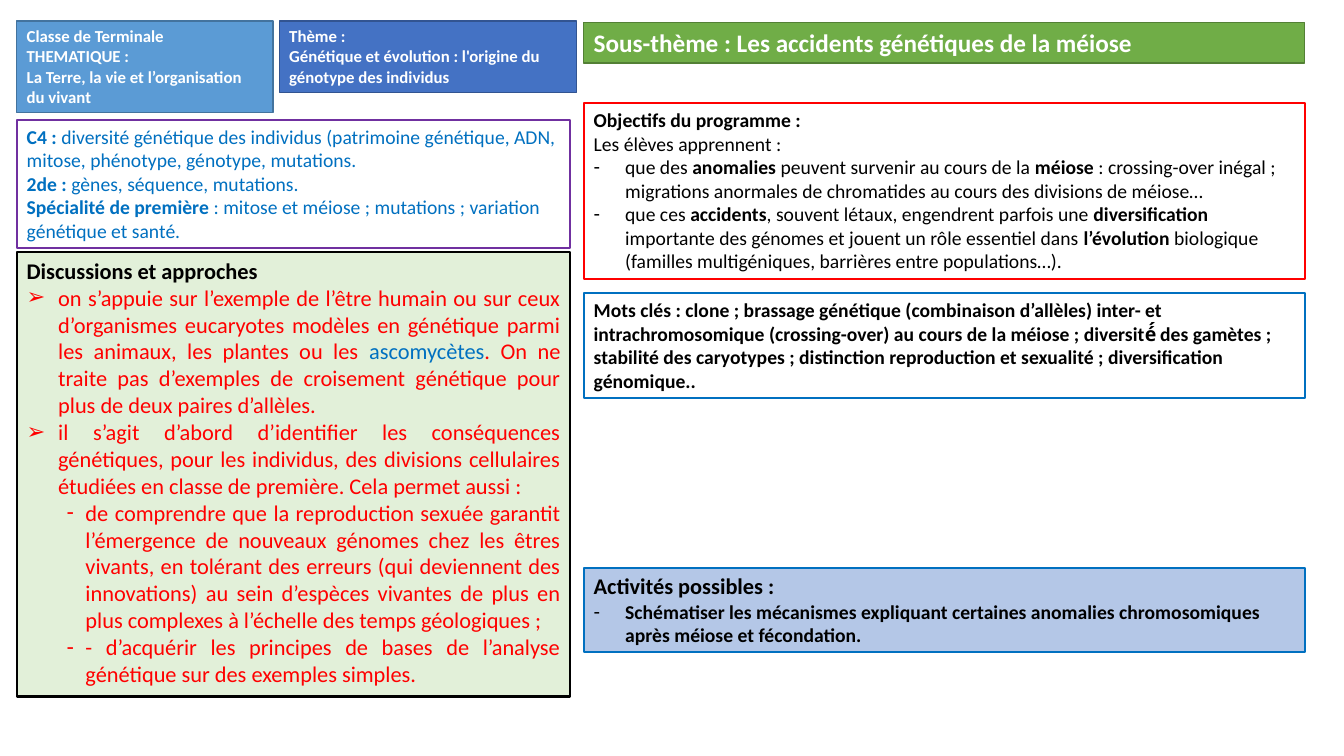
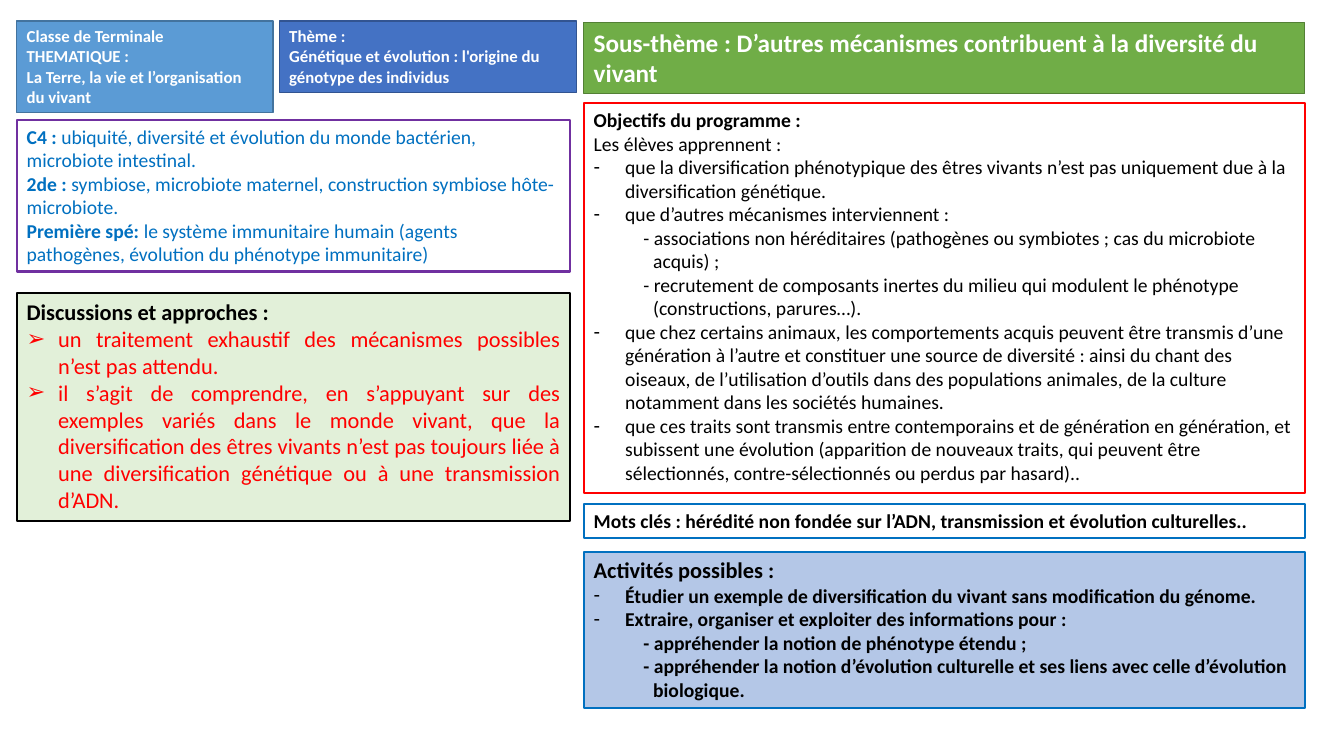
from dataclasses import dataclass, replace
from typing import NamedTuple, Optional

from lxml import etree
from pptx import Presentation
from pptx import util as u
from pptx.dml import color as colors
from pptx.enum import shapes, text
from pptx.oxml import ns


# Theme: colours, type sizes and font
@dataclass(frozen=True)
class Theme:
    font: str = "Calibri"
    white: str = "FFFFFF"
    black: str = "000000"
    red: str = "FF0000"
    blue: str = "0070C0"
    purple: str = "7030A0"
    class_fill: str = "5B9BD5"
    class_line: str = "43739E"
    topic_fill: str = "4472C4"
    topic_line: str = "325491"
    subtopic_fill: str = "70AD47"
    subtopic_line: str = "538035"
    discussion_fill: str = "E2F0D9"
    activity_fill: str = "B4C7E7"
    label_size: float = 12
    body_size: float = 14
    heading_size: float = 16
    title_size: float = 18


THEME = Theme()


# Paragraph styles; *asterisks* in a text mark its emphasised parts
@dataclass(frozen=True)
class ParagraphStyle:
    size: float
    color: str = THEME.black
    bold: bool = False
    emphasis_color: Optional[str] = None  # None: emphasis is bold
    justified: bool = False
    level: int = 0
    margin: float = 0
    indent: float = 0
    bullet: str = ""


LABEL = ParagraphStyle(THEME.label_size, THEME.white, bold=True)
TITLE = replace(LABEL, size=THEME.title_size)
BODY = ParagraphStyle(THEME.body_size)
INTRO = replace(BODY, justified=True)
INTRO_BOLD = replace(INTRO, bold=True)
KEYWORDS = replace(BODY, bold=True)
ITEM = replace(BODY, margin=22.5, indent=-22.5, bullet="-")
SUBITEM = replace(BODY, level=1, margin=42.5, indent=-7)
PRIOR = replace(BODY, color=THEME.blue)
HEADING = replace(KEYWORDS, size=THEME.heading_size)
DISCUSSION_HEADING = replace(HEADING, justified=True)
ACTIVITY = replace(ITEM, bold=True)
SUBACTIVITY = replace(SUBITEM, bold=True)
ARROW = ParagraphStyle(THEME.heading_size, THEME.red, emphasis_color=THEME.blue,
                       justified=True, level=1, margin=22.5, indent=-22.5, bullet="➢")
DASH = replace(ARROW, margin=42, indent=-13.5, bullet="-")


# Panel kinds: column, outline and fill
class PanelKind(NamedTuple):
    left: float
    width: float
    line: str
    line_width: float = 1.5
    fill: Optional[str] = None


LEFT, LEFT_WIDTH = 12, 395.5
RIGHT, RIGHT_WIDTH = 417, 515

CLASS = PanelKind(LEFT, 183, THEME.class_line, 1, THEME.class_fill)
TOPIC = PanelKind(199.5, 212.5, THEME.topic_line, 1, THEME.topic_fill)
SUBTOPIC = PanelKind(RIGHT, RIGHT_WIDTH, THEME.subtopic_line, 1, THEME.subtopic_fill)
PRIOR_BOX = PanelKind(LEFT, LEFT_WIDTH, THEME.purple)
DISCUSSION_BOX = PanelKind(LEFT, LEFT_WIDTH, THEME.black, fill=THEME.discussion_fill)
OBJECTIVE_BOX = PanelKind(RIGHT, RIGHT_WIDTH, THEME.red)
KEYWORD_BOX = PanelKind(RIGHT, RIGHT_WIDTH, THEME.blue)
ACTIVITY_BOX = PanelKind(RIGHT, RIGHT_WIDTH, THEME.blue, fill=THEME.activity_fill)


class Line(NamedTuple):
    style: ParagraphStyle
    text: str


class Panel(NamedTuple):
    kind: PanelKind
    top: float
    height: float
    lines: list[Line]


# Panels shared by both slides
HEADER = [
    Panel(CLASS, 15, 65.5, [
        Line(LABEL, "Classe de Terminale"),
        Line(LABEL, "THEMATIQUE :"),
        Line(LABEL, "La Terre, la vie et l’organisation du vivant"),
    ]),
    Panel(TOPIC, 15, 51, [
        Line(LABEL, "Thème :"),
        Line(LABEL, "Génétique et évolution : l'origine du génotype des individus"),
    ]),
]
OBJECTIVE_INTRO = [
    Line(INTRO_BOLD, "Objectifs du programme :"),
    Line(INTRO, "Les élèves apprennent :"),
]
ACTIVITY_INTRO = [Line(HEADING, "Activités possibles :")]
SUBTOPIC_TOP, BOX_TOP, PRIOR_TOP = 16, 73.5, 85.5

# Slide 1: genetic accidents of meiosis
ACCIDENTS = [
    Panel(SUBTOPIC, SUBTOPIC_TOP, 29, [
        Line(TITLE, "Sous-thème : Les accidents génétiques de la méiose"),
    ]),
    Panel(OBJECTIVE_BOX, BOX_TOP, 126, OBJECTIVE_INTRO + [
        Line(ITEM, "que des *anomalies* peuvent survenir au cours de la *méiose* : "
                   "crossing-over inégal ; migrations anormales de chromatides au cours "
                   "des divisions de méiose…"),
        Line(ITEM, "que ces *accidents*, souvent létaux, engendrent parfois une "
                   "*diversification* importante des génomes et jouent un rôle essentiel "
                   "dans *l’évolution* biologique (familles multigéniques, barrières "
                   "entre populations…)."),
    ]),
    Panel(PRIOR_BOX, PRIOR_TOP, 92, [
        Line(PRIOR, "*C4 : *diversité génétique des individus (patrimoine génétique, ADN, "
                    "mitose, phénotype, génotype, mutations."),
        Line(PRIOR, "*2de : *gènes, séquence, mutations."),
        Line(PRIOR, "*Spécialité de première* : mitose et méiose ; mutations ; variation "
                    "génétique et santé."),
    ]),
    Panel(DISCUSSION_BOX, 180, 317.5, [
        Line(DISCUSSION_HEADING, "Discussions et approches"),
        Line(ARROW, "on s’appuie sur l’exemple de l’être humain ou sur ceux d’organismes "
                    "eucaryotes modèles en génétique parmi les animaux, les plantes ou les "
                    "*ascomycètes*. On ne traite pas d’exemples de croisement génétique "
                    "pour plus de deux paires d’allèles."),
        Line(ARROW, "il s’agit d’abord d’identifier les conséquences génétiques, pour les "
                    "individus, des divisions cellulaires étudiées en classe de première. "
                    "Cela permet aussi :"),
        Line(DASH, "de comprendre que la reproduction sexuée garantit l’émergence de "
                   "nouveaux génomes chez les êtres vivants, en tolérant des erreurs (qui "
                   "deviennent des innovations) au sein d’espèces vivantes de plus en plus "
                   "complexes à l’échelle des temps géologiques ;"),
        Line(DASH, "- d’acquérir les principes de bases de l’analyse génétique sur des "
                   "exemples simples."),
    ]),
    Panel(ACTIVITY_BOX, 405.5, 60.5, ACTIVITY_INTRO + [
        Line(ACTIVITY, "Schématiser les mécanismes expliquant certaines anomalies "
                       "chromosomiques après méiose et fécondation."),
    ]),
    Panel(KEYWORD_BOX, 209.5, 75, [
        Line(KEYWORDS, "Mots clés : clone ; brassage génétique (combinaison d’allèles) "
                       "inter- et intrachromosomique (crossing-over) au cours de la méiose ; "
                       "diversité́ des gamètes ; stabilité des caryotypes ; distinction "
                       "reproduction et sexualité ; diversification génomique.."),
    ]),
]

# Slide 2: other mechanisms of diversity
MECHANISMS = [
    Panel(SUBTOPIC, SUBTOPIC_TOP, 51, [
        Line(TITLE, "Sous-thème : D’autres mécanismes contribuent à la diversité du vivant"),
    ]),
    Panel(OBJECTIVE_BOX, BOX_TOP, 278.5, OBJECTIVE_INTRO + [
        Line(ITEM, "que la diversification phénotypique des êtres vivants n’est pas "
                   "uniquement due à la diversification génétique."),
        Line(ITEM, "que d’autres mécanismes interviennent :"),
        Line(SUBITEM, "- associations non héréditaires (pathogènes ou symbiotes ; cas du "
                      "microbiote acquis) ;"),
        Line(SUBITEM, "- recrutement de composants inertes du milieu qui modulent le "
                      "phénotype (constructions, parures…)."),
        Line(ITEM, "que chez certains animaux, les comportements acquis peuvent être "
                   "transmis d’une génération à l’autre et constituer une source de "
                   "diversité : ainsi du chant des oiseaux, de l’utilisation d’outils dans "
                   "des populations animales, de la culture notamment dans les sociétés "
                   "humaines."),
        Line(ITEM, "que ces traits sont transmis entre contemporains et de génération en "
                   "génération, et subissent une évolution (apparition de nouveaux traits, "
                   "qui peuvent être sélectionnés, contre-sélectionnés ou perdus par "
                   "hasard).."),
    ]),
    Panel(PRIOR_BOX, PRIOR_TOP, 108.5, [
        Line(PRIOR, "*C4 : *ubiquité, diversité et évolution du monde bactérien, microbiote "
                    "intestinal."),
        Line(PRIOR, "*2de : *symbiose, microbiote maternel, construction symbiose "
                    "hôte-microbiote."),
        Line(PRIOR, "*Première spé: *le système immunitaire humain (agents pathogènes, "
                    "évolution du phénotype immunitaire)"),
    ]),
    Panel(DISCUSSION_BOX, 209.5, 163, [
        Line(DISCUSSION_HEADING, "Discussions et approches :"),
        Line(ARROW, "un traitement exhaustif des mécanismes possibles n’est pas attendu."),
        Line(ARROW, "il s’agit de comprendre, en s’appuyant sur des exemples variés dans le "
                    "monde vivant, que la diversification des êtres vivants n’est pas "
                    "toujours liée à une diversification génétique ou à une transmission "
                    "d’ADN."),
    ]),
    Panel(ACTIVITY_BOX, 394, 111.5, ACTIVITY_INTRO + [
        Line(ACTIVITY, "Étudier un exemple de diversification du vivant sans modification "
                       "du génome."),
        Line(ACTIVITY, "Extraire, organiser et exploiter des informations pour :"),
        Line(SUBACTIVITY, "- appréhender la notion de phénotype étendu ;"),
        Line(SUBACTIVITY, "- appréhender la notion d’évolution culturelle et ses liens avec "
                          "celle d’évolution biologique."),
    ]),
    Panel(KEYWORD_BOX, 360, 24.5, [
        Line(KEYWORDS, "Mots clés : hérédité non fondée sur l’ADN, transmission et évolution "
                       "culturelles.."),
    ]),
]


# Drawing
def rgb(value: str) -> colors.RGBColor:
    return colors.RGBColor.from_string(value)


def set_indent(paragraph, style: ParagraphStyle) -> None:
    properties = paragraph._p.get_or_add_pPr()
    properties.set("marL", str(int(u.Pt(style.margin))))
    properties.set("indent", str(int(u.Pt(style.indent))))
    if style.bullet:
        etree.SubElement(properties, ns.qn("a:buFont")).set("typeface", "Arial")
        etree.SubElement(properties, ns.qn("a:buChar")).set("char", style.bullet)


def write_line(paragraph, line: Line) -> None:
    style = line.style
    paragraph.alignment = text.PP_ALIGN.JUSTIFY if style.justified else text.PP_ALIGN.LEFT
    paragraph.level = style.level
    set_indent(paragraph, style)
    for index, part in enumerate(line.text.split("*")):
        if not part:
            continue
        emphasised = index % 2 == 1
        recolored = emphasised and style.emphasis_color is not None
        run = paragraph.add_run()
        run.text = part
        run.font.name = THEME.font
        run.font.size = u.Pt(style.size)
        run.font.bold = style.bold or (emphasised and not recolored)
        run.font.color.rgb = rgb(style.emphasis_color if recolored else style.color)


def draw_panel(slide, panel: Panel) -> None:
    kind = panel.kind
    shape = slide.shapes.add_shape(
        shapes.MSO_SHAPE.RECTANGLE, u.Pt(kind.left), u.Pt(panel.top),
        u.Pt(kind.width), u.Pt(panel.height))
    shape.shadow.inherit = False
    if kind.fill:
        shape.fill.solid()
        shape.fill.fore_color.rgb = rgb(kind.fill)
    else:
        shape.fill.background()
    shape.line.color.rgb = rgb(kind.line)
    shape.line.width = u.Pt(kind.line_width)

    frame = shape.text_frame
    frame.word_wrap = True
    frame.auto_size = text.MSO_AUTO_SIZE.SHAPE_TO_FIT_TEXT
    frame.vertical_anchor = text.MSO_ANCHOR.TOP
    for index, line in enumerate(panel.lines):
        write_line(frame.add_paragraph() if index else frame.paragraphs[0], line)


def main() -> None:
    presentation = Presentation()
    presentation.slide_width = u.Pt(960)
    presentation.slide_height = u.Pt(540)
    blank_layout = presentation.slide_layouts[6]
    for panels in (ACCIDENTS, MECHANISMS):
        slide = presentation.slides.add_slide(blank_layout)
        for panel in HEADER + panels:
            draw_panel(slide, panel)
    presentation.save("out.pptx")


if __name__ == "__main__":
    main()
